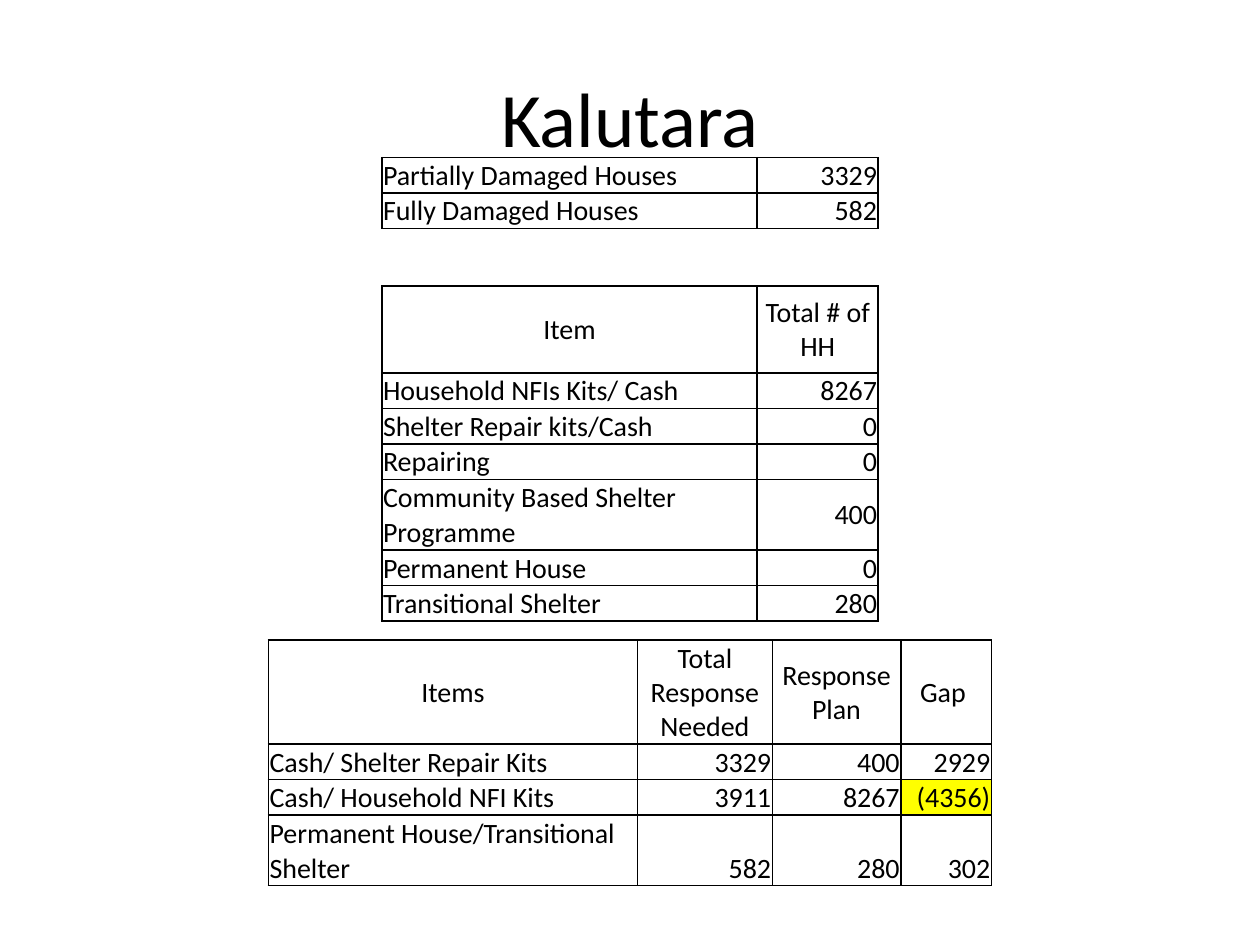
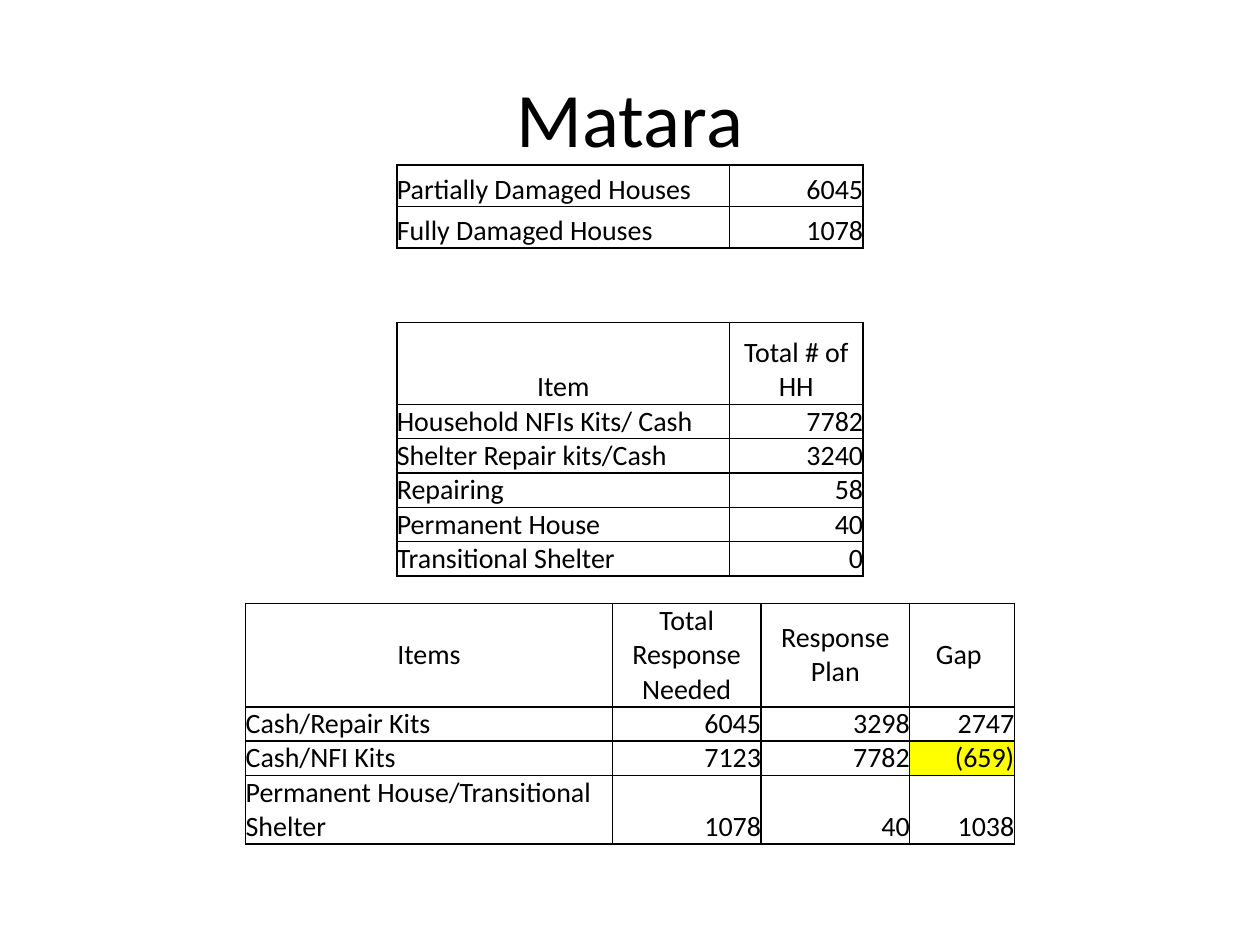
from lxml import etree
from pptx import Presentation
from pptx import util as u
from pptx.dml.color import RGBColor
from pptx.enum import text
from pptx.oxml.ns import qn

# Shared look
BLACK = RGBColor(0, 0, 0)
OVERSUPPLY = RGBColor(0xFF, 0xFF, 0)
FONT = "Calibri"
SLIDE_W, SLIDE_H = 10, 7.5
TITLE_BOX = {"left": 0.05 * SLIDE_W, "top": 0.04 * SLIDE_H,
             "width": 0.9 * SLIDE_W, "height": SLIDE_H / 6}
LONG_LABEL = 30  # labels with more letters take two lines
MIDDLE, BOTTOM = text.MSO_ANCHOR.MIDDLE, text.MSO_ANCHOR.BOTTOM
LEFT, CENTER, RIGHT = text.PP_ALIGN.LEFT, text.PP_ALIGN.CENTER, text.PP_ALIGN.RIGHT

# Column headings
DELIVERED_HEAD = ("Item", "Total # of HH")
GAP_HEAD = ("Items", "Total Response Needed", "Response Plan", "Gap ")

# Each table: top, column widths, heading, heading height, line height,
# heading anchor, body anchor, rows
DISTRICTS = {
    "Kalutara": (0.01, [
        (1.25, (2.98, 0.96), None, 0, 0.28, MIDDLE, BOTTOM, [
            ("Partially Damaged Houses", "3329"),
            ("Fully Damaged Houses", "582")]),
        (2.27, (2.98, 0.96), DELIVERED_HEAD, 0.69, 0.28, MIDDLE, MIDDLE, [
            ("Household NFIs Kits/ Cash", "8267"),
            ("Shelter Repair kits/Cash", "0"),
            ("Repairing", "0"),
            ("Community Based Shelter Programme", "400"),
            ("Permanent House", "0"),
            ("Transitional Shelter", "280")]),
        (5.08, (2.93, 1.07, 1.02, 0.72), GAP_HEAD, 0.82, 0.28, MIDDLE, BOTTOM, [
            ("Cash/ Shelter Repair Kits", "3329", "400", "2929"),
            ("Cash/ Household NFI Kits", "3911", "8267", "(4356)"),
            ("Permanent House/Transitional Shelter", "582", "280", "302")]),
    ]),
    "Matara": (0, [
        (1.31, (2.64, 1.06), None, 0, 0.33, MIDDLE, BOTTOM, [
            ("Partially Damaged Houses", "6045"),
            ("Fully Damaged Houses", "1078")]),
        (2.56, (2.64, 1.06), DELIVERED_HEAD, 0.65, 0.27, BOTTOM, MIDDLE, [
            ("Household NFIs Kits/ Cash", "7782"),
            ("Shelter Repair kits/Cash", "3240"),
            ("Repairing", "58"),
            ("Permanent House", "40"),
            ("Transitional Shelter", "0")]),
        (4.79, (2.91, 1.18, 1.18, 0.83), GAP_HEAD, 0.82, 0.27, MIDDLE, BOTTOM, [
            ("Cash/Repair Kits", "6045", "3298", "2747"),
            ("Cash/NFI Kits", "7123", "7782", "(659)"),
            ("Permanent House/Transitional Shelter", "1078", "40", "1038")]),
    ]),
}


def write(frame, words, size, align):
    frame.text = words
    paragraph = frame.paragraphs[0]
    paragraph.alignment = align
    look = {"name": FONT, "size": u.Pt(size), "bold": False}
    for key, value in look.items():
        setattr(paragraph.font, key, value)
        setattr(paragraph.runs[0].font, key, value)
    paragraph.runs[0].font.color.rgb = BLACK


def outline(cell):
    properties = cell._tc.get_or_add_tcPr()
    for place, side in enumerate(("a:lnL", "a:lnR", "a:lnT", "a:lnB")):
        border = etree.Element(qn(side), w=str(u.Pt(1)))
        solid = etree.SubElement(border, qn("a:solidFill"))
        etree.SubElement(solid, qn("a:srgbClr"), val=str(BLACK))
        properties.insert(place, border)


deck = Presentation()
deck.slide_width, deck.slide_height = u.Inches(SLIDE_W), u.Inches(SLIDE_H)

for district, (inset, tables) in DISTRICTS.items():
    slide = deck.slides.add_slide(deck.slide_layouts[5])

    # District name
    title = slide.shapes.title
    for key, value in TITLE_BOX.items():
        setattr(title, key, u.Inches(value))
    title.text_frame.vertical_anchor = MIDDLE
    write(title.text_frame, district, 44, CENTER)

    # Damage, delivered items and remaining gap, each centred on the slide
    for top, widths, head, head_h, line_h, head_anchor, body_anchor, body in tables:
        rows = ([head] if head else []) + body
        heights = [head_h if row is head
                   else line_h * (2 if len(row[0]) > LONG_LABEL else 1)
                   for row in rows]
        box = ((SLIDE_W - sum(widths)) / 2, top, sum(widths), sum(heights))
        grid = slide.shapes.add_table(
            len(rows), len(widths), *map(u.Inches, box)).table
        grid.first_row = grid.horz_banding = False
        for column, width in zip(grid.columns, widths):
            column.width = u.Inches(width)

        for r, row in enumerate(rows):
            grid.rows[r].height = u.Inches(heights[r])
            for c, words in enumerate(row):
                cell = grid.cell(r, c)
                layout = {"margin_left": u.Inches(inset),
                          "margin_right": u.Inches(inset),
                          "margin_top": u.Inches(inset),
                          "margin_bottom": 0,
                          "vertical_anchor": head_anchor if row is head else body_anchor}
                for key, value in layout.items():
                    setattr(cell, key, value)
                align = CENTER if row is head else RIGHT if c else LEFT
                write(cell.text_frame, words, 16, align)
                # Bracketed gaps are oversupplied
                if words.startswith("("):
                    cell.fill.solid()
                    cell.fill.fore_color.rgb = OVERSUPPLY
                else:
                    cell.fill.background()
                outline(cell)

deck.save("out.pptx")
